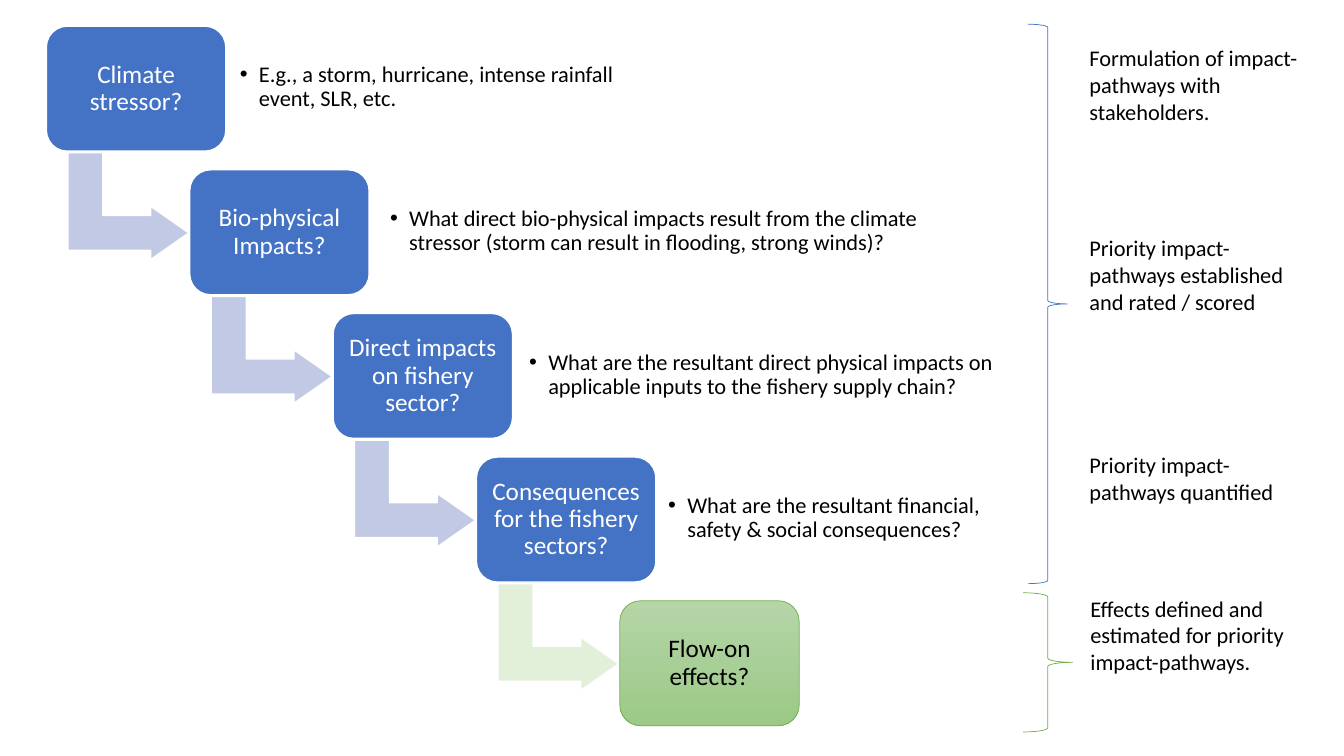
from lxml.etree import SubElement
from pptx import Presentation
from pptx.dml.color import RGBColor
from pptx.enum.shapes import MSO_SHAPE as Preset
from pptx.enum.text import MSO_ANCHOR as Anchor, MSO_AUTO_SIZE as AutoSize, PP_ALIGN as Align
from pptx.oxml.ns import qn
from pptx.util import Pt

WHITE = RGBColor(0xFF, 0xFF, 0xFF)
BLACK = RGBColor(0x00, 0x00, 0x00)
BLUE = RGBColor(0x44, 0x72, 0xC4)
PALE_BLUE = RGBColor(0xC1, 0xC9, 0xE4)
GREEN = RGBColor(0x70, 0xAD, 0x47)
PALE_GREEN = RGBColor(0xE2, 0xF0, 0xD9)
GRADIENT_GREENS = (RGBColor(0xB5, 0xD5, 0xA7), RGBColor(0x9C, 0xC9, 0x87))

BOX_LEFT, BOX_TOP = 33.1, 18.7
BOX_WIDTH, BOX_HEIGHT = 128.2, 89.3
STEP_X, STEP_Y = 102.4, 102.6
ARROW_OFFSET_X, ARROW_OFFSET_Y = 20.4, 85.4
ARROW_WIDTH, ARROW_HEIGHT = 76.3, 86.4
DETAIL_OFFSET_Y, DETAIL_HEIGHT = 7.5, 72.7
BULLET_INDENT = 13.7
LINE_HEIGHT = 19.5

MIDDLE_FRAME = {
    "word_wrap": True, "vertical_anchor": Anchor.MIDDLE,
    "margin_left": Pt(5), "margin_right": Pt(5),
    "margin_top": Pt(5), "margin_bottom": Pt(5),
}
NOTE_FRAME = {"word_wrap": True, "auto_size": AutoSize.SHAPE_TO_FIT_TEXT}

STAGES = (
    "Climate stressor?",
    "Bio-physical Impacts?",
    "Direct impacts on fishery sector?",
    "Consequences for the fishery sectors?",
    "Flow-on effects?",
)
# Left, width and text of the bullet beside each stage
DETAILS = (
    (166.3, 299.5, "E.g., a storm, hurricane, intense rainfall event, SLR, etc."),
    (273.6, 387.4, "What direct bio-physical impacts result from the climate stressor "
                   "(storm can result in flooding, strong winds)?"),
    (373, 342.7, "What are the resultant direct physical impacts on applicable inputs "
                 "to the fishery supply chain?"),
    (472.3, 253.4, "What are the resultant financial, safety & social consequences?"),
)
# Lines of space before each note, and its text
PATHWAY_NOTES = (
    (0, "Formulation of impact-pathways with stakeholders."),
    (4, "Priority impact-pathways established and rated / scored"),
    (5, "Priority impact-pathways quantified"),
)
EFFECT_NOTES = ((0, "Effects defined and estimated for priority impact-pathways."),)


def apply_format(target, values):
    for name, value in values.items():
        setattr(target, name, value)


def write(paragraph, text, size, color, **paragraph_format):
    run = paragraph.add_run()
    run.text = text
    apply_format(run.font, {"name": "Calibri", "size": Pt(size)})
    run.font.color.rgb = color
    apply_format(paragraph, paragraph_format)


def add_preset(slide, preset, bounds, fill, line, line_width):
    """Add a shape; fill is one colour, a pair for a gradient, or None."""
    shape = slide.shapes.add_shape(preset, *map(Pt, bounds))
    shape.shadow.inherit = False
    if fill is None:
        shape.fill.background()
    elif fill is GRADIENT_GREENS:
        shape.fill.gradient()
        shape.fill.gradient_angle = 270
        for stop, color in zip(shape.fill.gradient_stops, fill):
            stop.color.rgb = color
    else:
        shape.fill.solid()
        shape.fill.fore_color.rgb = fill
    shape.line.color.rgb = line
    shape.line.width = Pt(line_width)
    return shape


def add_arrow(slide, left, top, fill):
    bounds = (left, top, ARROW_WIDTH, ARROW_HEIGHT)
    arrow = add_preset(slide, Preset.BENT_UP_ARROW, bounds, fill, WHITE, 1)
    arrow.rotation = 90
    for index, value in enumerate((0.328, 0.25, 0.358)):
        arrow.adjustments[index] = value


def add_stage(slide, left, top, text, fill, line, line_width, color):
    bounds = (left, top, BOX_WIDTH, BOX_HEIGHT)
    box = add_preset(slide, Preset.ROUNDED_RECTANGLE, bounds, fill, line, line_width)
    apply_format(box.text_frame, MIDDLE_FRAME)
    write(box.text_frame.paragraphs[0], text, 18, color,
          alignment=Align.CENTER, line_spacing=0.9)


def add_detail(slide, left, top, width, text):
    box = slide.shapes.add_textbox(Pt(left), Pt(top), Pt(width), Pt(DETAIL_HEIGHT))
    apply_format(box.text_frame, MIDDLE_FRAME)
    paragraph = box.text_frame.paragraphs[0]
    write(paragraph, text, 16, BLACK, line_spacing=0.9)
    properties = paragraph._p.get_or_add_pPr()
    properties.set("marL", str(Pt(BULLET_INDENT)))
    properties.set("indent", str(-Pt(BULLET_INDENT)))
    SubElement(properties, qn("a:buFont"), typeface="Arial")
    SubElement(properties, qn("a:buChar"), char="•")


def add_notes(slide, bounds, notes):
    frame = slide.shapes.add_textbox(*map(Pt, bounds)).text_frame
    apply_format(frame, NOTE_FRAME)
    for index, (gap_lines, text) in enumerate(notes):
        paragraph = frame.add_paragraph() if index else frame.paragraphs[0]
        write(paragraph, text, 16, BLACK, space_before=Pt(gap_lines * LINE_HEIGHT))


def add_staircase(slide):
    last = len(STAGES) - 1
    for index, text in enumerate(STAGES):
        left, top = BOX_LEFT + index * STEP_X, BOX_TOP + index * STEP_Y
        if index == last:
            add_stage(slide, left, top, text, GRADIENT_GREENS, GREEN, 0.5, BLACK)
            continue
        arrow_fill = PALE_GREEN if index == last - 1 else PALE_BLUE
        add_arrow(slide, left + ARROW_OFFSET_X, top + ARROW_OFFSET_Y, arrow_fill)
        add_stage(slide, left, top, text, BLUE, WHITE, 1, WHITE)
        detail_left, width, detail = DETAILS[index]
        add_detail(slide, detail_left, top + DETAIL_OFFSET_Y, width, detail)


def main():
    presentation = Presentation()
    presentation.slide_width, presentation.slide_height = Pt(960), Pt(540)
    slide = presentation.slides.add_slide(presentation.slide_layouts[6])
    add_staircase(slide)
    add_preset(slide, Preset.RIGHT_BRACE, (734.4, 17.3, 28.1, 399.6), None, BLUE, 0.5)
    add_notes(slide, (771.1, 28.1, 175, 337), PATHWAY_NOTES)
    add_preset(slide, Preset.RIGHT_BRACE, (730.8, 423.4, 35.3, 99.4), None, GREEN, 0.5)
    add_notes(slide, (771.8, 421.2, 175, 65.5), EFFECT_NOTES)
    presentation.save("out.pptx")


if __name__ == "__main__":
    main()
